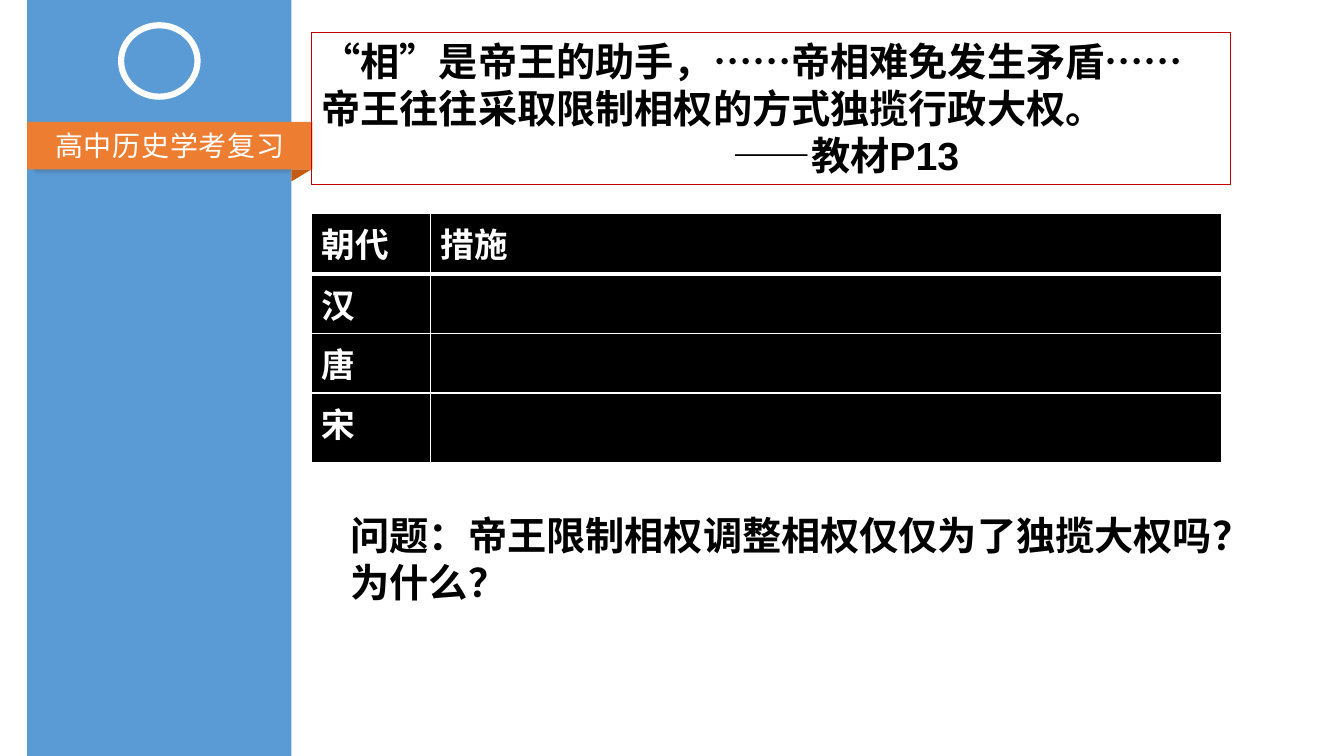
from lxml.etree import SubElement
from pptx import Presentation
from pptx.dml.color import RGBColor
from pptx.enum.shapes import MSO_SHAPE as SHAPE
from pptx.enum.text import MSO_ANCHOR as ANCHOR, PP_ALIGN as ALIGN
from pptx.oxml.ns import qn
from pptx.util import Inches, Pt

COLORS = {
    "sidebar": "5B9BD5",
    "shade": "323232",
    "banner": "ED7D31",
    "fold": "C55A11",
    "frame": "C00000",
    "white": "FFFFFF",
    "black": "000000",
}
CJK = "Noto Sans CJK SC"
QUOTE = "“相”是帝王的助手，……帝相难免发生矛盾……帝王往往采取限制相权的方式独揽行政大权。"
SOURCE = "——教材P13"
QUESTION = "问题：帝王限制相权调整相权仅仅为了独揽大权吗？为什么？"
MEASURES = [("朝代", "措施"), ("汉", ""), ("唐", ""), ("宋", "")]


def add_block(kind, box, fill):
    block = slide.shapes.add_shape(kind, *map(Inches, box))
    block.shadow.inherit = False
    block.line.fill.background()
    block.fill.solid()
    block.fill.fore_color.rgb = RGBColor.from_string(COLORS[fill])
    return block


def write(paragraph, text, size, color, latin, bold=True):
    run = paragraph.add_run()
    run.text = text
    style = {"size": Pt(size), "bold": bold, "name": latin}
    for key, value in style.items():
        setattr(run.font, key, value)
    run.font.color.rgb = RGBColor.from_string(COLORS[color])
    props = run.font._element
    props.set("lang", "zh-CN")
    SubElement(props, qn("a:ea")).set("typeface", CJK)
    return props


prs = Presentation()
prs.slide_width, prs.slide_height = Inches(13.33), Inches(7.5)
slide = prs.slides.add_slide(prs.slide_layouts[6])

add_block(SHAPE.RECTANGLE, (0.27, 0, 2.62, 7.5), "sidebar")

shade = add_block(SHAPE.RECTANGLE, (0.27, 1.3, 2.68, 0.47), "shade")
shade_color = shade._element.spPr.find(qn("a:solidFill"))[0]
SubElement(shade_color, qn("a:alpha")).set("val", "24000")
effects = shade._element.spPr.find(qn("a:effectLst"))
SubElement(effects, qn("a:softEdge")).set("rad", str(Inches(0.05)))

emblem = add_block(SHAPE.DONUT, (1.17, 0.22, 0.82, 0.77), "white")
emblem.adjustments[0] = 0.08

banner = add_block(SHAPE.RECTANGLE, (0.27, 1.21, 2.83, 0.47), "banner")
banner.text_frame.vertical_anchor = ANCHOR.MIDDLE
banner_title = banner.text_frame.paragraphs[0]
banner_title.alignment = ALIGN.CENTER
write(banner_title, "高中历史学考复习", 20, "white", CJK, False).set("spc", "50")

fold = add_block(SHAPE.RIGHT_TRIANGLE, (2.93, 1.64, 0.12, 0.2), "fold")
fold.rotation = 90

quote = slide.shapes.add_textbox(*map(Inches, (3.09, 0.32, 9.11, 1.51)))
quote.line.color.rgb = RGBColor.from_string(COLORS["frame"])
quote.line.width = Pt(0.75)
quote.text_frame.word_wrap = True
write(quote.text_frame.paragraphs[0], QUOTE, 28, "black", "Arial")
source = quote.text_frame.add_paragraph()
source._p.get_or_add_pPr().set("marL", str(Inches(4.08)))
write(source, SOURCE, 28, "black", "Arial")

measures = slide.shapes.add_table(4, 2, *map(Inches, (3.09, 2.12, 9.03, 2.47))).table
for column, width in zip(measures.columns, (1.18, 7.85)):
    column.width = Inches(width)
for row, height in zip(measures.rows, (0.6, 0.59, 0.59, 0.69)):
    row.height = Inches(height)
for r, texts in enumerate(MEASURES):
    for c, text in enumerate(texts):
        cell = measures.cell(r, c)
        cell.fill.solid()
        cell.fill.fore_color.rgb = RGBColor.from_string(COLORS["black"])
        if text:
            write(cell.text_frame.paragraphs[0], text, 24, "white", CJK)
        borders = {"lnL": 1, "lnR": 1, "lnT": 3 if r == 1 else 1, "lnB": 3 if r == 0 else 1}
        cell_props = cell._tc.get_or_add_tcPr()
        for i, (side, width) in enumerate(borders.items()):
            border = SubElement(cell_props, qn(f"a:{side}"), w=str(Pt(width)))
            border_fill = SubElement(border, qn("a:solidFill"))
            SubElement(border_fill, qn("a:srgbClr")).set("val", COLORS["white"])
            cell_props.insert(i, border)

question = slide.shapes.add_textbox(*map(Inches, (3.38, 5.02, 9.07, 1.04)))
question.text_frame.word_wrap = True
write(question.text_frame.paragraphs[0], QUESTION, 28, "black", "Arial")

prs.save("out.pptx")
